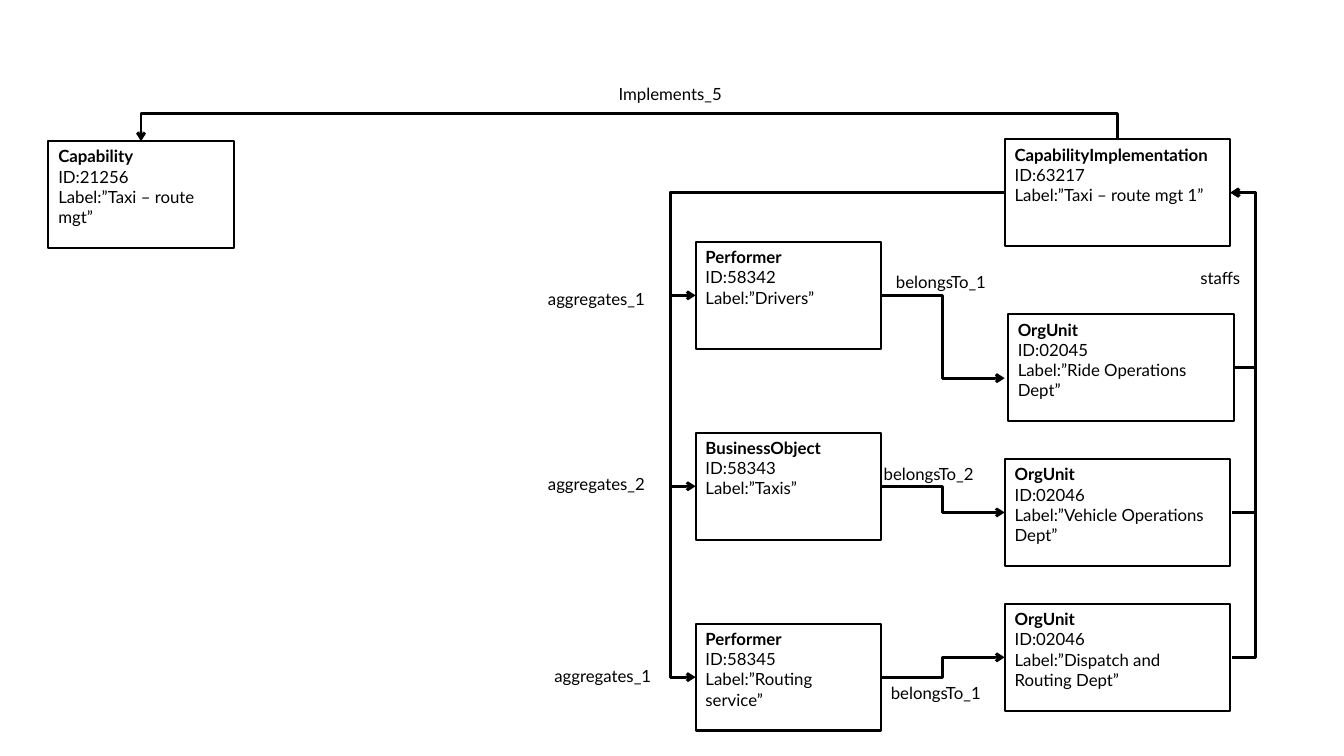
from dataclasses import dataclass
from typing import Optional

import pptx
import pptx.dml.color
import pptx.enum.shapes
import pptx.enum.text
import pptx.oxml
import pptx.oxml.ns
import pptx.util
from pptx.util import Cm

TOP, LEFT, BOTTOM, RIGHT = range(4)


@dataclass(frozen=True)
class Theme:
    ink: pptx.dml.color.RGBColor = pptx.dml.color.RGBColor(0, 0, 0)
    paper: pptx.dml.color.RGBColor = pptx.dml.color.RGBColor(255, 255, 255)
    font: str = "Lato"
    size: float = 12
    edge: float = 1.5
    wire: float = 2


@dataclass(frozen=True)
class Box:
    kind: str
    code: str
    label: str
    x: float
    y: float
    wide: float


@dataclass(frozen=True)
class Link:
    """Elbow line; the arrow points at head, bend places its middle part."""
    head: str
    head_side: int
    tail: str
    tail_side: int
    bend: float
    tip: Optional[tuple[float, float]] = None


@dataclass(frozen=True)
class Tag:
    text: str
    x: float
    y: float


THEME = Theme()
HIGH = 2.69
SLIM, BROAD = 4.67, 5.69
MID_X, UNIT_X = 17.53, 25.32
MID_Y = [6.1 + 4.81 * row for row in range(3)]
UNIT_Y = [7.92 + 3.65 * row for row in range(3)]

BOXES = {
    "goal": Box("Capability", "21256", "Taxi – route mgt", 1.22, 3.56, SLIM),
    "main": Box("CapabilityImplementation", "63217", "Taxi – route mgt 1",
                UNIT_X, 3.51, BROAD),
    "part0": Box("Performer", "58342", "Drivers", MID_X, MID_Y[0], SLIM),
    "part1": Box("BusinessObject", "58343", "Taxis", MID_X, MID_Y[1], SLIM),
    "part2": Box("Performer", "58345", "Routing service", MID_X, MID_Y[2], SLIM),
    "unit0": Box("OrgUnit", "02045", "Ride Operations Dept", 25.4, UNIT_Y[0], BROAD),
    "unit1": Box("OrgUnit", "02046", "Vehicle Operations Dept",
                 UNIT_X, UNIT_Y[1], BROAD),
    "unit2": Box("OrgUnit", "02046", "Dispatch and Routing Dept",
                 UNIT_X, UNIT_Y[2], BROAD),
}

LINKS = [Link("goal", TOP, "main", TOP, 2.87)]
for row in range(3):
    part, unit = f"part{row}", f"unit{row}"
    LINKS += [
        Link(part, LEFT, "main", LEFT, 16.89),
        Link(unit, LEFT, part, RIGHT, 23.76, (UNIT_X, 9.53) if row == 0 else None),
        Link("main", RIGHT, unit, RIGHT, 31.65),
    ]

TAGS = [
    Tag("Implements_5", 15.34, 1.98),
    Tag("staffs", 30, 6.63),
    Tag("belongsTo_1", 22.33, 6.73),
    Tag("belongsTo_2", 22.02, 11.56),
    Tag("belongsTo_1", 22.2, 17.07),
    Tag("aggregates_1", 13.56, 7.14),
    Tag("aggregates_2", 13.56, 11.81),
    Tag("aggregates_1", 13.72, 16.66),
]


def write(frame, lines: list[str], bold_first: bool = False) -> None:
    """Fill a frame with left-set lines in the theme font."""
    frame.text = "\n".join(lines)
    frame.word_wrap = True
    frame.vertical_anchor = pptx.enum.text.MSO_ANCHOR.TOP
    for index, para in enumerate(frame.paragraphs):
        para.alignment = pptx.enum.text.PP_ALIGN.LEFT
        for run in para.runs:
            run.font.name = THEME.font
            run.font.size = pptx.util.Pt(THEME.size)
            run.font.bold = bold_first and index == 0
            run.font.color.rgb = THEME.ink


def draw_box(slide, box: Box):
    shape = slide.shapes.add_shape(
        pptx.enum.shapes.MSO_SHAPE.RECTANGLE,
        Cm(box.x), Cm(box.y), Cm(box.wide), Cm(HIGH))
    shape.shadow.inherit = False
    shape.fill.solid()
    shape.fill.fore_color.rgb = THEME.paper
    shape.line.color.rgb = THEME.ink
    shape.line.width = pptx.util.Pt(THEME.edge)
    write(shape.text_frame,
          [box.kind, f"ID:{box.code}", f"Label:”{box.label}”"], True)
    return shape


def add_node(parent, tag: str, **values: str):
    node = pptx.oxml.ns.qn(tag)
    child = parent.makeelement(node, values)
    parent.append(child)
    return child


def draw_link(slide, shapes: dict, link: Link) -> None:
    wire = slide.shapes.add_connector(
        pptx.enum.shapes.MSO_CONNECTOR.ELBOW, 0, 0, Cm(1), Cm(1))
    if link.tip:
        wire.begin_x, wire.begin_y = Cm(link.tip[0]), Cm(link.tip[1])
    else:
        wire.begin_connect(shapes[link.head], link.head_side)
    wire.end_connect(shapes[link.tail], link.tail_side)
    # The bend is a share of the width, so the width must not be nil
    if wire.end_x == wire.begin_x:
        wire.end_x += Cm(0.05)
    props = wire.element.spPr
    start, stop = wire.begin_x, wire.end_x

    # A link between tops is a level one turned by a quarter
    if link.head_side == TOP:
        start, stop = wire.begin_y, wire.end_y
        mid_x = (wire.begin_x + wire.end_x) // 2
        mid_y = (start + stop) // 2
        half_x, half_y = wire.begin_x - mid_x, start - mid_y
        wire.begin_x, wire.end_x = mid_x + half_y, mid_x - half_y
        wire.begin_y, wire.end_y = mid_y - half_x, mid_y + half_x
        props.find(pptx.oxml.ns.qn("a:xfrm")).set("rot", "5400000")

    share = round((Cm(link.bend) - start) / (stop - start) * 100000)
    guides = props.find(".//" + pptx.oxml.ns.qn("a:avLst"))
    add_node(guides, "a:gd", name="adj1", fmla=f"val {share}")

    wire.line.color.rgb = THEME.ink
    wire.line.width = pptx.util.Pt(THEME.wire)
    add_node(props.find(pptx.oxml.ns.qn("a:ln")), "a:headEnd", type="arrow")
    add_node(props, "a:effectLst")


def draw_tag(slide, tag: Tag) -> None:
    area = slide.shapes.add_textbox(Cm(tag.x), Cm(tag.y), Cm(3.3), Cm(0.77))
    write(area.text_frame, [tag.text])


def main() -> None:
    deck = pptx.Presentation()
    deck.slide_width, deck.slide_height = Cm(33.87), Cm(19.05)
    slide = deck.slides.add_slide(deck.slide_layouts[6])

    # Boxes first, then the links that join them, then the link names
    shapes = {name: draw_box(slide, box) for name, box in BOXES.items()}
    for link in LINKS:
        draw_link(slide, shapes, link)
    for tag in TAGS:
        draw_tag(slide, tag)
    deck.save("out.pptx")


if __name__ == "__main__":
    main()
